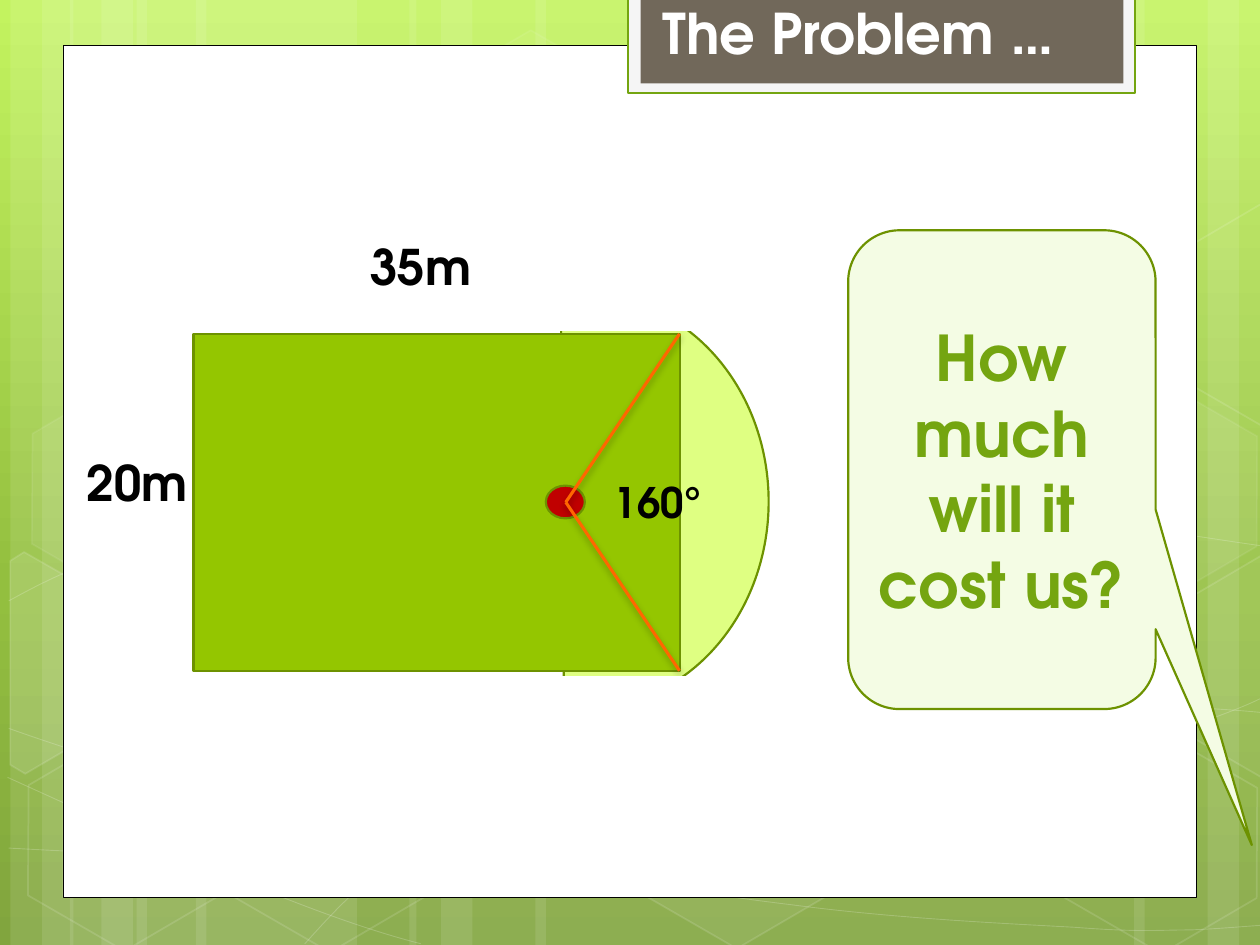
import math
import pptx
import pptx.util
import pptx.dml.color
import pptx.oxml
import pptx.oxml.ns
import pptx.enum.shapes
import pptx.enum.text
import lxml.etree

Pt = pptx.util.Pt
qn = pptx.oxml.ns.qn
KIND = pptx.enum.shapes.MSO_SHAPE
ALIGN = pptx.enum.text.PP_ALIGN
ANCHOR = pptx.enum.text.MSO_ANCHOR

FONT = "TeX Gyre Adventor"
COLOURS = {
    "white": "FFFFFF", "black": "000000", "frame": "F5F5F5", "tab": "71685A",
    "leaf": "74A510", "outline": "6D9200", "lawn": "94C600", "sector": "DFFF82",
    "centre": "C00000", "radius": "FF6700", "bubble": "F4FCE4",
}
SKY = [(0, "C3F35F"), (62, "93BF3F"), (100, "81A53E")]
WIDTH, HEIGHT = 720, 540

TITLE = "The Problem …"
QUESTION = "How much will it cost us?"
MEASURES = [("20m", 42.5, 255.3, 41, 28), ("35m", 204.5, 131.8, 41, 28),
            ("160°", 343.6, 268.6, 36, 24)]

BAND_SETS = [(6, 126, 1), (40, 126, 1), (726, 126, -1), (234, 222, 1)]
CURVES = [
    [(5, 484.6), (43.9, 486.7), (82.8, 488.9), (136.8, 488.2), (190.8, 487.4),
     (257.8, 486), (329.8, 478.8), (401.8, 471.6), (504, 457.9), (570.2, 444.2),
     (635.8, 430.6), (703.4, 409), (725, 396.7)],
    [(5, 343.4), (25.9, 331.9), (46.8, 321.1), (87.1, 310.3), (128.2, 299.5),
     (186.5, 283), (249.8, 278.6), (313.9, 273.6), (391.7, 272.9), (470.9, 278.6),
     (550.1, 284.4), (681.8, 306.7), (725, 312.5)],
    [(4.3, 444.2), (91.4, 483.8), (177.8, 523.4), (240.5, 539.3)],
    [(5, 416.2), (27.4, 424.1), (50.4, 432), (92.2, 443.5), (133.9, 454.3),
     (196.6, 472.3), (257, 484.6), (316.8, 496.8), (392.4, 509.8), (452.2, 517),
     (511.9, 524.9), (576, 527.8), (614.2, 529.9), (651.6, 532.8), (661.7, 531.4),
     (680.4, 531.4), (699.1, 530.6), (712.1, 529.2), (725, 528.5)],
    [(174.2, 539.3), (187.2, 524.9), (200.2, 510.5), (217.4, 497.5), (234.7, 484.6),
     (259.2, 470.2), (279.4, 460.1), (299.5, 450), (311.8, 445.7), (338.4, 438.5),
     (364.3, 431.3), (412.6, 421.2), (437.8, 416.2), (463.7, 411.1), (467.3, 411.1),
     (489.6, 409.7), (511.9, 407.5), (547.2, 405.4), (571.7, 404.6), (596.9, 403.9),
     (637.9, 404.6), (637.9, 404.6), (654, 404.6), (670, 404.6), (686.2, 404.6),
     (699.1, 405.4), (711.4, 406.1), (724.3, 407.5)],
]
HEXAGONS = [(240.5, 25.9, 4, 8), (357.8, 424.1, 6, 12), (7.9, 425.5, 0, 12),
            (10.1, 224.6, 7, 8), (125.3, 426.2, 0, 12), (542.2, 326.2, 10, 12),
            (600.5, 427, 0, 12), (600.5, 226.1, 7, 8)]
TILT = 30
LEFT_CUT = [(5.8, 320.4), (13.7, 315.4), (69.1, 347), (68.4, 410.4), (14.4, 442.1), (5.8, 437)]
RIGHT_CUT = [(666.7, 349.2), (720.7, 317.5), (726.5, 321.1), (726.5, 441.4),
             (721.4, 444.2), (666.7, 412.6)]
CUT_HEXAGONS = [(LEFT_CUT, (25.9, 385.2), 10), (RIGHT_CUT, (709.2, 374.4), 4),
                ([(x, y - 201) for x, y in RIGHT_CUT], (709.2, 173.4), 0)]


def paint(fill, colour, alpha=100):
    if not colour or not alpha:
        fill.background()
        return
    fill.solid()
    fill.fore_color.rgb = pptx.dml.color.RGBColor.from_string(COLOURS[colour])
    if alpha < 100:
        tint = fill._xPr.find(qn("a:solidFill"))[0]
        lxml.etree.SubElement(tint, qn("a:alpha")).set("val", str(alpha * 1000))


def style(shape, colour, alpha=100, line=None, weight=1.25, line_alpha=100):
    shape.shadow.inherit = False
    paint(shape.fill, colour, alpha)
    paint(shape.line.fill, line, line_alpha)
    if line:
        shape.line.width = Pt(weight)


def add(slide, kind, box, *look, adjust=(), turn=0, **more):
    shape = slide.shapes.add_shape(kind, *map(Pt, box))
    for index, value in enumerate(adjust):
        shape.adjustments[index] = value
    shape.rotation = turn
    style(shape, *look, **more)
    return shape


def outline(slide, points, close):
    start, *rest = [(Pt(x), Pt(y)) for x, y in points]
    builder = slide.shapes.build_freeform(*start)
    builder.add_line_segments(rest, close=close)
    return builder.convert_to_shape()


def add_curve(slide, knots):
    curve = outline(slide, knots, False)
    segments = list(curve._element.iter(qn("a:lnTo")))
    for i in range(0, len(segments), 3):
        bend = lxml.etree.Element(qn("a:cubicBezTo"))
        segments[i].addprevious(bend)
        for segment in segments[i:i + 3]:
            bend.append(segment[0])
            segment.getparent().remove(segment)
    return curve


def untilt(points, centre):
    cos, sin = math.cos(math.radians(TILT)), math.sin(math.radians(TILT))
    cx, cy = centre
    return [(cx + (x - cx) * cos + (y - cy) * sin, cy - (x - cx) * sin + (y - cy) * cos)
            for x, y in points]


def write(shape, text, size, colour, align=ALIGN.LEFT, anchor=ANCHOR.TOP):
    frame = shape.text_frame
    frame.text = text
    frame.word_wrap = True
    frame.auto_size = pptx.enum.text.MSO_AUTO_SIZE.NONE
    frame.vertical_anchor = anchor
    paragraph = frame.paragraphs[0]
    paragraph.alignment = align
    font = paragraph.runs[0].font
    font.name, font.size, font.bold = FONT, Pt(size), True
    font.color.rgb = pptx.dml.color.RGBColor.from_string(COLOURS[colour])


def add_backdrop(slide):
    fill = slide.background.fill
    fill.gradient()
    fill.gradient_angle = 270
    stops = slide._element.find(".//" + qn("a:gsLst"))
    for stop in list(stops):
        stops.remove(stop)
    for position, colour in SKY:
        stop = lxml.etree.SubElement(stops, qn("a:gs"), pos=str(position * 1000))
        lxml.etree.SubElement(stop, qn("a:srgbClr"), val=colour)

    for origin, wide, direction in BAND_SETS:
        for offset, width in ((72, wide), (0, 36), (18, 60)):
            left = origin + offset if direction > 0 else origin - offset - width
            add(slide, KIND.RECTANGLE, (left, 0, width, HEIGHT), "white", 10,
                turn=0 if direction > 0 else 180)
    for knots in CURVES:
        style(add_curve(slide, knots), None, line="white", weight=0.5, line_alpha=20)
    for left, top, alpha, line_alpha in HEXAGONS:
        add(slide, KIND.HEXAGON, (left, top, 126, 109.4), "white", alpha, "white", 1, line_alpha,
            adjust=(0.285, 1.155), turn=TILT)
    for points, centre, alpha in CUT_HEXAGONS:
        cut = outline(slide, untilt(points, centre), True)
        cut.rotation = TILT
        style(cut, "white", alpha, "white", 1, 12)
    add(slide, KIND.RECTANGLE, (36, 26, 648, 487), "white", line="black", weight=0.5)
    add(slide, KIND.RECTANGLE, (359, -1.4, 289.5, 54.7), "frame", line="leaf")
    add(slide, KIND.RECTANGLE, (366.1, -1.4, 275.9, 49), "tab")


def add_radius(slide, start, end):
    radius = slide.shapes.add_connector(pptx.enum.shapes.MSO_CONNECTOR.STRAIGHT,
                                        *map(Pt, start + end))
    paint(radius.line.fill, "radius")
    radius.line.width = Pt(1.75)
    effects = lxml.etree.SubElement(radius._element.spPr, qn("a:effectLst"))
    shadow = lxml.etree.SubElement(effects, qn("a:outerShdw"), blurRad=str(Pt(4)),
                                   dist=str(Pt(2)), dir="5400000", rotWithShape="0")
    tint = lxml.etree.SubElement(shadow, qn("a:srgbClr"), val=COLOURS["black"])
    lxml.etree.SubElement(tint, qn("a:alpha"), val="28000")


def add_garden(slide):
    add(slide, KIND.CHORD, (229.7, 168.5, 209.5, 236.2), "sector", line="outline",
        adjust=(49.912, 165.543), turn=180)
    add(slide, KIND.RECTANGLE, (110.6, 190.8, 278, 192.7), "lawn", line="outline")
    add(slide, KIND.OVAL, (311.9, 277.5, 22.3, 18.7), "centre", line="outline")
    for corner_y in (190.8, 383.3):
        add_radius(slide, (323.3, 287), (388.3, corner_y))
    for left, top in ((256.3, 131.8), (269.3, 386.9)):
        add(slide, KIND.RECTANGLE, (left, top, 175.7, 56.9), "white", line="white")
    for text, left, top, height, size in MEASURES:
        label = slide.shapes.add_textbox(*map(Pt, (left, top, 89.3, height)))
        write(label, text, size, "black")


def main():
    deck = pptx.Presentation()
    deck.slide_width, deck.slide_height = Pt(WIDTH), Pt(HEIGHT)
    slide = deck.slides.add_slide(deck.slide_layouts[5])
    add_backdrop(slide)
    add_garden(slide)

    title = slide.shapes.title
    title.left, title.top, title.width, title.height = map(Pt, (371.5, 1.4, 266.4, 39.6))
    write(title, TITLE, 32, "white", anchor=ANCHOR.BOTTOM)
    slide.shapes._spTree.append(title._element)

    bubble = add(slide, KIND.ROUNDED_RECTANGULAR_CALLOUT, (484.7, 131.6, 175.7, 273.6),
                 "bubble", line="outline", adjust=(0.813, 0.784, 0.167))
    write(bubble, QUESTION, 36, "leaf", ALIGN.CENTER, ANCHOR.MIDDLE)
    deck.save("out.pptx")


if __name__ == "__main__":
    main()
